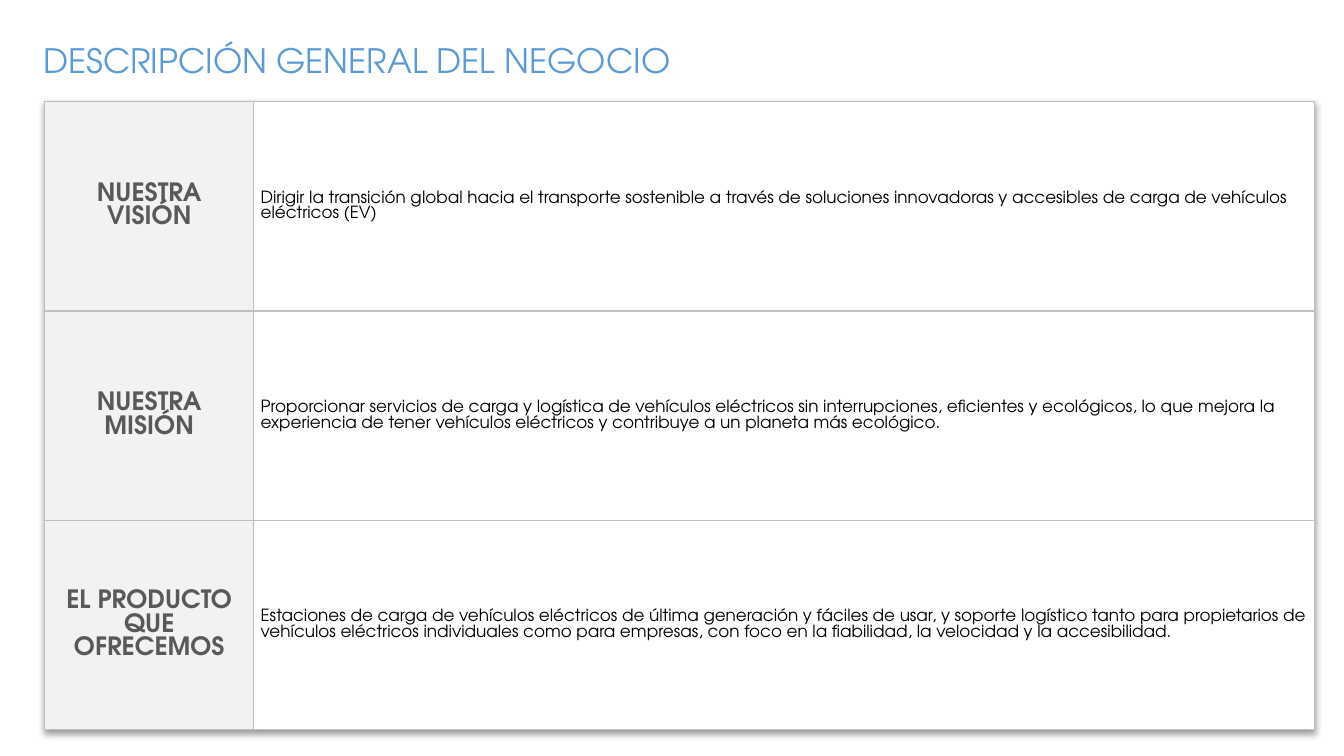
from lxml.etree import SubElement
from pptx import Presentation
from pptx.dml.color import RGBColor
from pptx.enum.text import MSO_ANCHOR as Anchor, MSO_AUTO_SIZE as Fit, PP_ALIGN as Align
from pptx.oxml import parse_xml
from pptx.oxml.ns import qn
from pptx.util import Pt

FONT = "TeX Gyre Adventor"
ROWS = [
    ("NUESTRA VISIÓN",
     "Dirigir la transición global hacia el transporte sostenible a través de "
     "soluciones innovadoras y accesibles de carga de vehículos eléctricos (EV)"),
    ("NUESTRA MISIÓN",
     "Proporcionar servicios de carga y logística de vehículos eléctricos sin "
     "interrupciones, eficientes y ecológicos, lo que mejora la experiencia de "
     "tener vehículos eléctricos y contribuye a un planeta más ecológico."),
    ("EL PRODUCTO QUE OFRECEMOS",
     "Estaciones de carga de vehículos eléctricos de última generación y fáciles "
     "de usar, y soporte logístico tanto para propietarios de vehículos eléctricos "
     "individuales como para empresas, con foco en la fiabilidad, la velocidad y "
     "la accesibilidad."),
]
SHADOW = (
    '<a:effectLst xmlns:a="http://schemas.openxmlformats.org/drawingml/2006/main">'
    '<a:outerShdw blurRad="50800" dist="38100" dir="5400000" algn="t" rotWithShape="0">'
    '<a:srgbClr val="000000"><a:alpha val="40000"/></a:srgbClr>'
    '</a:outerShdw></a:effectLst>'
)


def rgb(code):
    return RGBColor.from_string(code)


def write(frame, text, size=12, color="000000", bold=False, align=Align.LEFT):
    par = frame.paragraphs[0]
    par.alignment = align
    run = par.add_run()
    run.text = text
    font = run.font
    font.name, font.size, font.bold = FONT, Pt(size), bold
    font.color.rgb = rgb(color)


def add_title(slide, text):
    title = slide.shapes.title
    title.left, title.top, title.width, title.height = Pt(23.8), Pt(25.2), Pt(581.8), Pt(36)
    frame = title.text_frame
    frame.word_wrap = True
    frame.auto_size = Fit.SHAPE_TO_FIT_TEXT
    frame.vertical_anchor = Anchor.TOP
    write(frame, text, size=24, color="5B9BD5")


def set_edges(cell, color="BFBFBF", width=1):
    props = cell._tc.get_or_add_tcPr()
    for i, side in enumerate(("lnL", "lnR", "lnT", "lnB")):
        line = props.makeelement(qn(f"a:{side}"), {"w": str(Pt(width))})
        fill = SubElement(line, qn("a:solidFill"))
        SubElement(fill, qn("a:srgbClr"), val=color)
        props.insert(i, line)


def fill_cell(cell, text, fill, **style):
    cell.fill.solid()
    cell.fill.fore_color.rgb = rgb(fill)
    cell.vertical_anchor = Anchor.MIDDLE
    set_edges(cell)
    write(cell.text_frame, text, **style)


def add_grid(slide, rows):
    widths, height = (149.2, 757.8), 149.6
    frame = slide.shapes.add_table(len(rows), len(widths), Pt(32), Pt(72.5),
                                   Pt(sum(widths)), Pt(height * len(rows)))
    table = frame.table
    table.first_row = table.horz_banding = False
    table._tbl.tblPr.insert(0, parse_xml(SHADOW))
    for col, width in zip(table.columns, widths):
        col.width = Pt(width)
    for i, (head, body) in enumerate(rows):
        table.rows[i].height = Pt(height)
        fill_cell(table.cell(i, 0), head, "F2F2F2", size=18, color="595959",
                  bold=True, align=Align.CENTER)
        cell = table.cell(i, 1)
        cell.margin_left = cell.margin_right = Pt(5)
        cell.margin_top = cell.margin_bottom = Pt(0)
        fill_cell(cell, body, "FFFFFF")


def main():
    deck = Presentation()
    deck.slide_width, deck.slide_height = Pt(960), Pt(540)
    slide = deck.slides.add_slide(deck.slide_layouts[5])
    add_title(slide, "DESCRIPCIÓN GENERAL DEL NEGOCIO")
    add_grid(slide, ROWS)
    deck.save("out.pptx")


if __name__ == "__main__":
    main()
